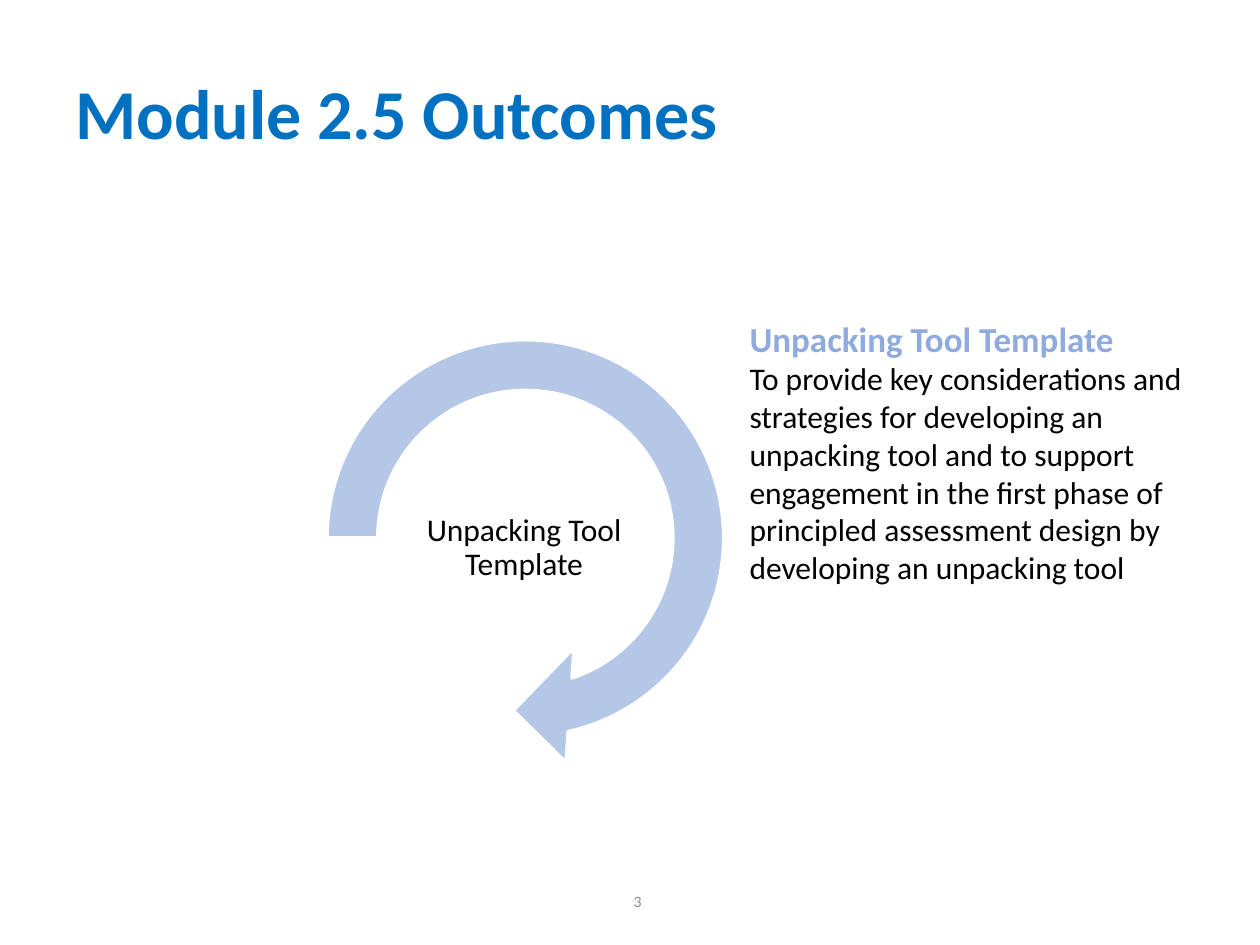
from pptx import Presentation
from pptx.dml.color import RGBColor
from pptx.enum.shapes import MSO_SHAPE
from pptx.enum.text import MSO_ANCHOR, PP_ALIGN
from pptx.util import Pt

LEFT, MID, RIGHT = PP_ALIGN.LEFT, PP_ALIGN.CENTER, PP_ALIGN.RIGHT
TOP, CENTER = MSO_ANCHOR.TOP, MSO_ANCHOR.MIDDLE
ARROW = MSO_SHAPE.CIRCULAR_ARROW
TITLE_ONLY = 5


def color(code):
    return RGBColor.from_string(code)


def put(item, values):
    """Set each named attribute of item."""
    for name, value in values.items():
        setattr(item, name, value)


class Deck:
    face = "Calibri"
    blue, soft, pale = "0070C0", "8FAADC", "B4C7E7"
    black, gray, white = "000000", "8C8C8C", "FFFFFF"

    def __init__(self, wide, high):
        self.file = Presentation()
        put(self.file, {"slide_width": Pt(wide), "slide_height": Pt(high)})
        self.slide = self.file.slides.add_slide(
            self.file.slide_layouts[TITLE_ONLY])

    def fill_text(self, frame, lines, align=LEFT, anchor=TOP, para=None):
        """Fill a frame with lines of (text, size, color, bold)."""
        put(frame, {"word_wrap": True, "vertical_anchor": anchor})
        for i, (text, size, code, bold) in enumerate(lines):
            p = frame.add_paragraph() if i else frame.paragraphs[0]
            put(p, {"alignment": align, **(para or {})})
            run = p.add_run()
            run.text = text
            put(run.font, {"name": self.face, "size": Pt(size), "bold": bold})
            run.font.color.rgb = color(code)

    def title(self, text, box):
        shape = self.slide.shapes.title
        put(shape, dict(zip(("left", "top", "width", "height"), map(Pt, box))))
        self.fill_text(shape.text_frame, [(text, 40, self.blue, True)],
                       anchor=CENTER, para={"line_spacing": 0.9})

    def text(self, box, lines, inset=None, **style):
        frame = self.slide.shapes.add_textbox(*map(Pt, box)).text_frame
        if inset is not None:
            sides = ("left", "top", "right", "bottom")
            put(frame, {f"margin_{side}": Pt(inset) for side in sides})
        self.fill_text(frame, lines, **style)

    def arrow(self, box, bends):
        shape = self.slide.shapes.add_shape(ARROW, *map(Pt, box))
        shape.shadow.inherit = False
        for i, bend in enumerate(bends):
            shape.adjustments[i] = bend
        shape.fill.solid()
        shape.fill.fore_color.rgb = color(self.pale)
        shape.line.color.rgb = color(self.white)
        shape.line.width = Pt(2)


def main():
    deck = Deck(720, 540)
    topic = "Unpacking Tool Template"
    deck.text((211.7, 500.4, 162, 28.8), [("3", 9, deck.gray, False)],
              align=RIGHT, anchor=CENTER)
    deck.title("Module 2.5 Outcomes", (36, 21.6, 648, 90))
    deck.arrow((168.5, 175.7, 263.5, 263.5), (0.11, 11.42, 45, 108, 0.125))
    deck.text((226.1, 276.5, 146.9, 73.4), [(topic, 18, deck.black, False)],
              inset=0.9, align=MID, anchor=CENTER, para={"line_spacing": 0.9})
    goal = ("To provide key considerations and strategies for developing an "
            "unpacking tool and to support engagement in the first phase of "
            "principled assessment design by developing an unpacking tool")
    deck.text((421.2, 177.8, 262.8, 162.7),
              [(topic, 20, deck.soft, True), (goal, 18, deck.black, False)])
    deck.file.save("out.pptx")


if __name__ == "__main__":
    main()
